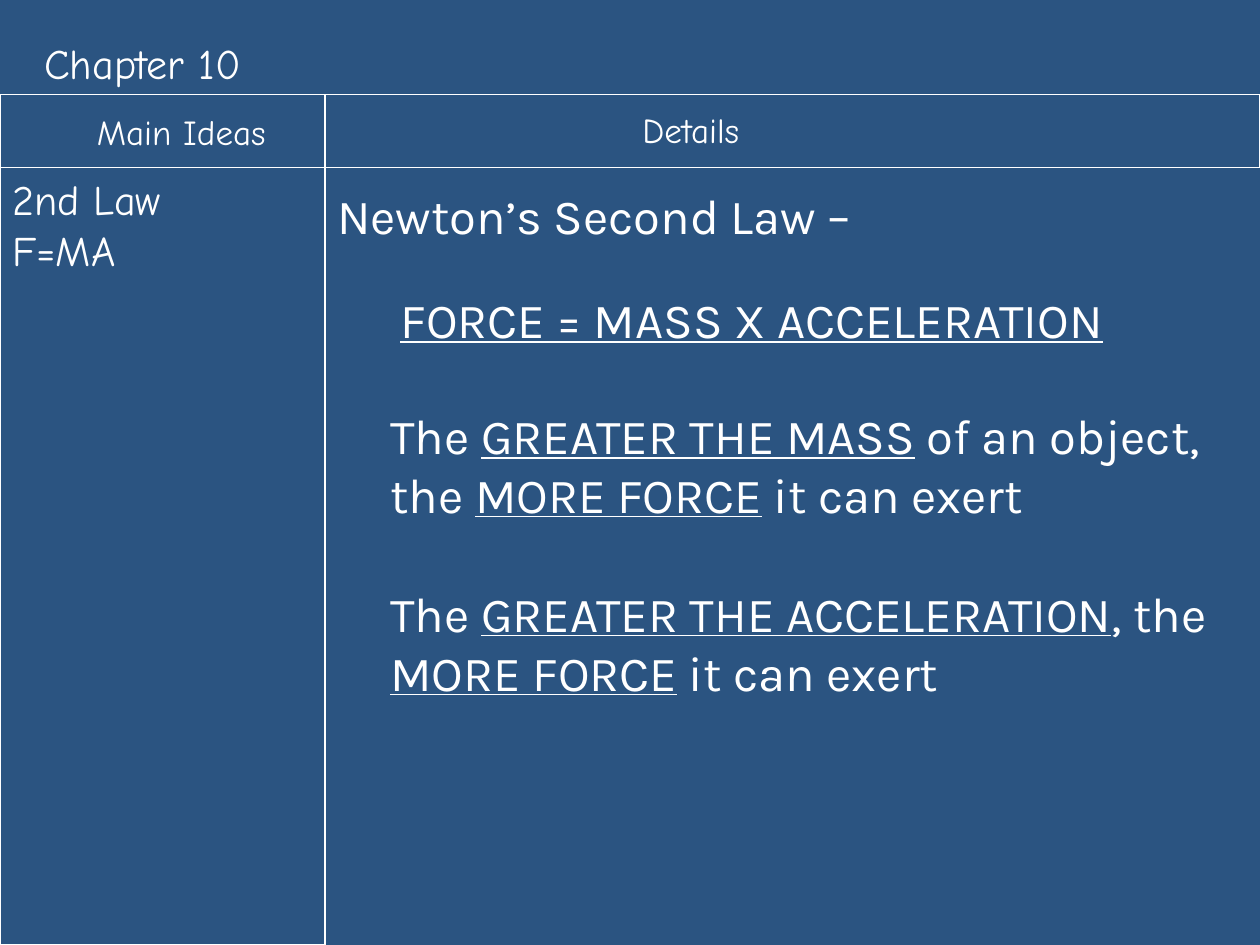
from dataclasses import dataclass

from pptx import Presentation
from pptx import util as u
from pptx.dml.color import RGBColor
from pptx.enum import shapes, text
from pptx.oxml.ns import qn
from lxml import etree


@dataclass(frozen=True)
class Theme:
    background: RGBColor = RGBColor(0x2B, 0x54, 0x81)
    ink: RGBColor = RGBColor(0xFF, 0xFF, 0xFF)
    hand_font: str = "Comic Neue"
    body_font: str = "Karla"
    label_size: int = 20
    heading_size: int = 24
    body_size: int = 28
    line_width: float = 0.75


class NotesSlide:
    """Holds the style and the slide being drawn."""

    def __init__(self, deck, theme):
        self.theme = theme
        self.slide = deck.slides.add_slide(deck.slide_layouts[5])
        fill = self.slide.background.fill
        fill.solid()
        fill.fore_color.rgb = theme.background

    def fill_text(self, frame, paragraphs, font, size, wrap=True):
        """Each paragraph is a list of runs, alternately plain and underlined."""
        frame.word_wrap = wrap
        frame.auto_size = text.MSO_AUTO_SIZE.NONE
        frame.vertical_anchor = text.MSO_ANCHOR.TOP
        for index, runs in enumerate(paragraphs):
            paragraph = frame.add_paragraph() if index else frame.paragraphs[0]
            paragraph.alignment = text.PP_ALIGN.LEFT
            paragraph.font.name = font
            paragraph.font.size = u.Pt(size)
            paragraph.font.color.rgb = self.theme.ink
            for position, words in enumerate(runs):
                if words:
                    run = paragraph.add_run()
                    run.text = words
                    if position % 2:
                        run.font.underline = True

    def title(self, words, box):
        heading = self.slide.shapes.title
        heading.left, heading.top, heading.width, heading.height = map(u.Inches, box)
        self.fill_text(heading.text_frame, [[words]],
                       self.theme.hand_font, self.theme.heading_size)

    def textbox(self, paragraphs, box, font, size, wrap=True):
        frame = self.slide.shapes.add_textbox(*map(u.Inches, box)).text_frame
        self.fill_text(frame, paragraphs, font, size, wrap)

    def label(self, words, box):
        self.textbox([[words]], box, self.theme.hand_font,
                     self.theme.label_size, wrap=False)

    def body(self, runs, box):
        self.textbox([runs], box, self.theme.body_font, self.theme.body_size)

    def outline(self, line):
        line.color.rgb = self.theme.ink
        line.width = u.Pt(self.theme.line_width)

    def frame(self, box):
        panel = self.slide.shapes.add_shape(
            shapes.MSO_SHAPE.RECTANGLE, *map(u.Inches, box))
        panel.shadow.inherit = False
        panel.fill.background()
        self.outline(panel.line)

    def rule(self, start, end):
        divider = self.slide.shapes.add_connector(
            shapes.MSO_CONNECTOR.STRAIGHT, *map(u.Inches, start + end))
        self.outline(divider.line)
        etree.SubElement(divider._element.spPr, qn("a:effectLst"))


def main():
    width, height = 10, 7.5
    header_top, header_bottom, column = 0.75, 1.33, 2.58

    deck = Presentation()
    deck.slide_width, deck.slide_height = u.Inches(width), u.Inches(height)
    theme = Theme()
    notes = NotesSlide(deck, theme)

    # Chapter heading and column labels
    notes.title("Chapter 10", (0.25, 0.25, 9.75, 0.5))
    notes.label("Main Ideas", (0.67, 0.83, 1.64, 0.49))
    notes.label("Details", (5, 0.81, 1.12, 0.49))

    # Note-taking grid
    notes.frame((0, header_top, width, header_bottom - header_top))
    notes.frame((0, header_bottom, column, height - header_bottom))
    notes.rule((column, header_bottom), (column, header_top))

    # Main ideas
    notes.textbox([["2nd Law"], ["F=MA"]], (0, header_bottom, 2.5, 0.9),
                  theme.hand_font, theme.heading_size)

    # Details
    notes.body(["Newton’s Second Law –"], (column, 1.42, 7.17, 0.57))
    notes.body(["", "FORCE = MASS X ACCELERATION"], (3.08, 2.25, 6.67, 0.87))
    effects = [
        (3.17, "GREATER THE MASS", " of an object, the "),
        (4.58, "GREATER THE ACCELERATION", ", the "),
    ]
    for top, cause, link in effects:
        notes.body(["The ", cause, link, "MORE FORCE", " it can exert"],
                   (3, top, 7, 1.03))

    deck.save("out.pptx")


if __name__ == "__main__":
    main()
